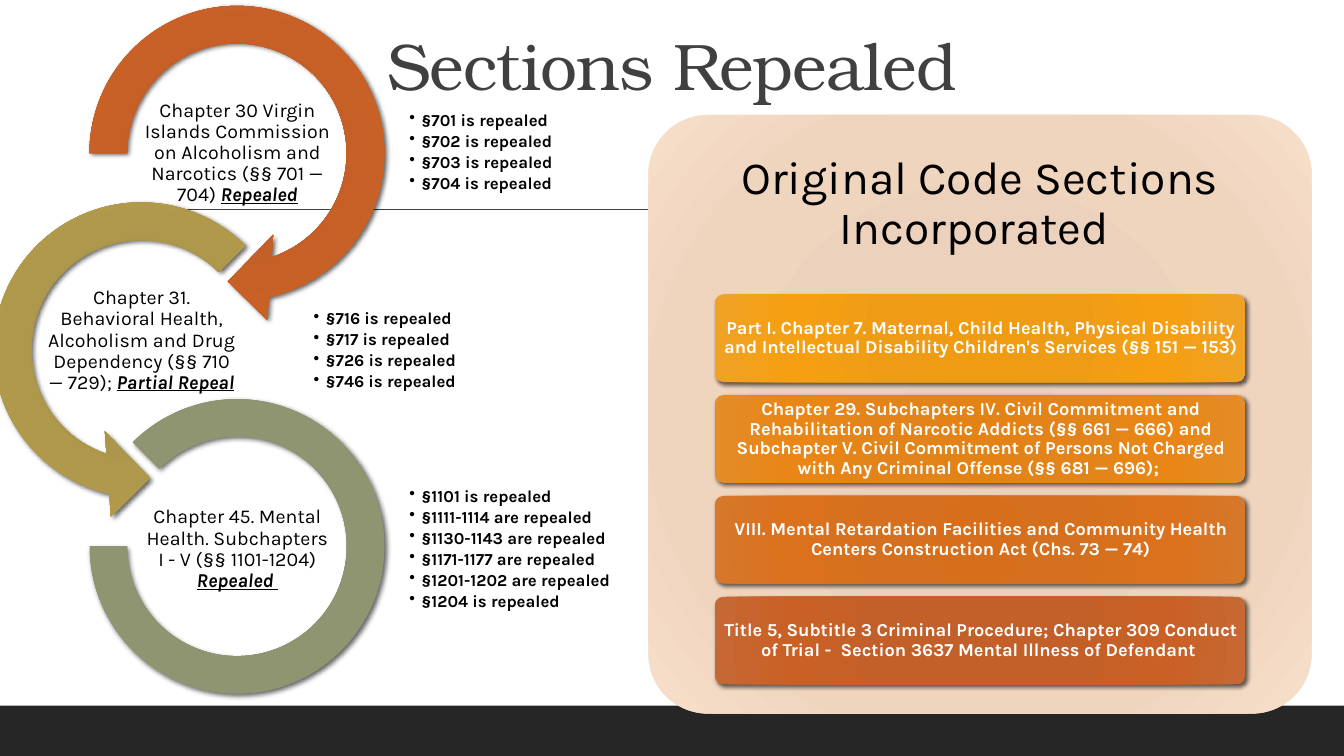
from lxml.etree import SubElement
from pptx import Presentation
from pptx.dml.color import RGBColor
from pptx.enum.shapes import MSO_CONNECTOR, MSO_SHAPE
from pptx.enum.text import MSO_ANCHOR, PP_ALIGN
from pptx.oxml.ns import qn
from pptx.util import Inches, Pt

WIDE, HIGH = 13.33, 7.5
BLACK, WHITE = RGBColor(0, 0, 0), RGBColor(255, 255, 255)
DARK, GRAY = RGBColor(0x26, 0x26, 0x26), RGBColor(0x40, 0x40, 0x40)


def shades(*codes):
    """Turn hex codes into a tuple of colours."""
    return tuple(RGBColor.from_string(code) for code in codes)


STOPS = (0, 34, 70, 100)
RUST = shades("C45D25", "C35F28", "C96025", "C66834")
GOLD = shades("AB9549", "AB964C", "B0994B", "B09C56")
SAGE = shades("8B926D", "8C936F", "8E9570", "939A78")
SAND = shades("EACFBA", "ECD2BD", "F0D5BE", "F7DFCB")
AMBER = shades("F09B11", "EE9C16", "F69F12", "EFA225")
HONEY = shades("E38316", "E2841A", "E98616", "E38C28")
CLAY = shades("D66E1B", "D5701F", "DB711C", "D6782C")

RINGS = [
    dict(kind=MSO_SHAPE.CIRCULAR_ARROW, mid=2.35, size=3.4, tone=RUST, drop=1.52,
         turn=(0.11, 11.42, 45, 108, 0.125),
         label="Chapter 30 Virgin Islands Commission on Alcoholism and Narcotics (§§ 701 — 704) ",
         mark="Repealed",
         items=["§701 is repealed", "§702 is repealed",
                "§703 is repealed", "§704 is repealed"]),
    dict(kind=MSO_SHAPE.LEFT_CIRCULAR_ARROW, mid=1.4, size=3.4, tone=GOLD, drop=3.38,
         turn=(0.11, 11.42, 63, 189, 0.125),
         label="Chapter 31. Behavioral Health, Alcoholism and Drug Dependency (§§ 710 — 729); ",
         mark="Partial Repeal",
         items=["§716 is repealed", "§717 is repealed",
                "§726 is repealed", "§746 is repealed"]),
    dict(kind=MSO_SHAPE.BLOCK_ARC, mid=2.35, size=2.92, tone=SAGE, drop=5.45,
         turn=(135, 108, 0.127),
         label="Chapter 45. Mental Health. Subchapters I - V (§§ 1101-1204) ",
         mark="Repealed ",
         items=["§1101 is repealed", "§1111-1114 are repealed",
                "§1130-1143 are repealed", "§1171-1177 are repealed",
                "§1201-1202 are repealed", "§1204 is repealed"]),
]
CARDS = [
    ("Part I. Chapter 7. Maternal, Child Health, Physical Disability and Intellectual "
     "Disability Children's Services (§§ 151 — 153)", AMBER),
    ("Chapter 29. Subchapters IV. Civil Commitment and Rehabilitation of Narcotic Addicts "
     "(§§ 661 — 666) and Subchapter V. Civil Commitment of Persons Not Charged with Any "
     "Criminal Offense (§§ 681 — 696); ", HONEY),
    ("VIII. Mental Retardation Facilities and Community Health Centers Construction Act "
     "(Chs. 73 — 74)", CLAY),
    ("Title 5, Subtitle 3 Criminal Procedure; Chapter 309 Conduct of Trial -  Section 3637 "
     "Mental Illness of Defendant ", RUST),
]

deck = Presentation()
deck.slide_width, deck.slide_height = Inches(WIDE), Inches(HIGH)
slide = deck.slides.add_slide(deck.slide_layouts[6])


def write(lines, box, size=14, font="Karla", tint=BLACK, bold=False, mark="",
          bullet=False, align=PP_ALIGN.CENTER, anchor=MSO_ANCHOR.MIDDLE,
          inset=(0.01, 0.01), after=0, tight=0):
    """Place formatted paragraphs in a text box."""
    frame = slide.shapes.add_textbox(*map(Inches, box)).text_frame
    frame.word_wrap, frame.vertical_anchor = True, anchor
    frame.margin_left = frame.margin_right = Inches(inset[0])
    frame.margin_top = frame.margin_bottom = Inches(inset[1])
    for row, line in enumerate(lines):
        para = frame.paragraphs[0] if row == 0 else frame.add_paragraph()
        para.alignment, para.line_spacing = align, 0.9
        para.space_after = Pt(after)
        if bullet:
            props = para._p.get_or_add_pPr()
            props.set("marL", str(Inches(0.12)))
            props.set("indent", str(Inches(-0.12)))
            SubElement(props, qn("a:buChar"), char="•")
        for text in filter(None, (line, mark)):
            run = para.add_run()
            run.text = text
            face = run.font
            face.name, face.size, face.color.rgb = font, Pt(size), tint
            face.bold = bold or text == mark
            if text == mark:
                face.italic = face.underline = True
            if tight:
                run._r.get_or_add_rPr().set("spc", str(int(tight * 100)))


def draw(kind, box, tones, turn=(), blur=0):
    """Place a shape with a radial blend and an optional shadow."""
    shape = slide.shapes.add_shape(kind, *map(Inches, box))
    for spot, value in enumerate(turn):
        shape.adjustments[spot] = value
    shape.line.fill.background()
    shape.shadow.inherit = False
    props = shape._element.spPr
    blend = SubElement(props, qn("a:gradFill"), rotWithShape="1")
    props.find(qn("a:prstGeom")).addnext(blend)
    stops = SubElement(blend, qn("a:gsLst"))
    for stop, tone in zip(STOPS, tones):
        point = SubElement(stops, qn("a:gs"), pos=str(stop * 1000))
        SubElement(point, qn("a:srgbClr"), val=str(tone))
    way = SubElement(blend, qn("a:path"), path="circle")
    SubElement(way, qn("a:fillToRect"), {side: "100000" for side in "ltrb"})
    if blur:
        cast = SubElement(props.find(qn("a:effectLst")), qn("a:outerShdw"),
                          blurRad=str(Pt(blur)), dist=str(Pt(2)),
                          dir=str(45 * 60000), algn="tl", rotWithShape="0")
        tint = SubElement(cast, qn("a:srgbClr"), val=str(BLACK))
        SubElement(tint, qn("a:alpha"), val="60000")


band = slide.shapes.add_shape(MSO_SHAPE.RECTANGLE, 0, Inches(7), Inches(WIDE), Inches(0.5))
band.fill.solid()
band.fill.fore_color.rgb = DARK
band.line.fill.background()
band.shadow.inherit = False

rule = slide.shapes.add_connector(
    MSO_CONNECTOR.STRAIGHT, *map(Inches, (1.31, 2.08, 12.21, 2.08)))
rule.line.color.rgb, rule.line.width = GRAY, Pt(1)
SubElement(rule._element.spPr, qn("a:effectLst"))

write(["Sections Repealed"], (3.74, -0.5, 13.69, 1.59), size=47, font="TeX Gyre Bonum",
      tint=GRAY, align=PP_ALIGN.LEFT, anchor=MSO_ANCHOR.BOTTOM, inset=(0.1, 0.05), tight=-0.5)

for row, ring in enumerate(RINGS):
    mid, size = ring["mid"], ring["size"]
    draw(ring["kind"], (mid - size / 2, 1.52 + 1.95 * row - size / 2, size, size),
         ring["tone"], ring["turn"], blur=3.5)
    write(ring["items"], (mid + 1.7, 0.83 + 1.97 * row, 2.04, 1.36), size=12, bold=True,
          bullet=True, align=PP_ALIGN.LEFT, after=2.1)
    write([ring["label"]], (mid - 0.94, ring["drop"] - 0.47, 1.89, 0.94), mark=ring["mark"])

LEFT, TOP, SPAN = 6.43, 1.14, 6.58
draw(MSO_SHAPE.ROUNDED_RECTANGLE, (LEFT, TOP, SPAN, 5.94), SAND, (0.1,))
write(["Original Code Sections Incorporated "], (LEFT, TOP, SPAN, 1.78), size=33,
      inset=(0.14, 0.14))
for row, (text, tones) in enumerate(CARDS):
    x, y, wide, high = LEFT + SPAN * 0.1, TOP + 1.78 + row, SPAN * 0.8, 0.87
    draw(MSO_SHAPE.ROUNDED_RECTANGLE, (x, y, wide, high), tones, (0.1,), blur=3)
    write([text], (x + 0.03, y + 0.03, wide - 0.05, high - 0.06), size=13, tint=WHITE,
          bold=True, inset=(0.04, 0.03))

deck.save("out.pptx")
